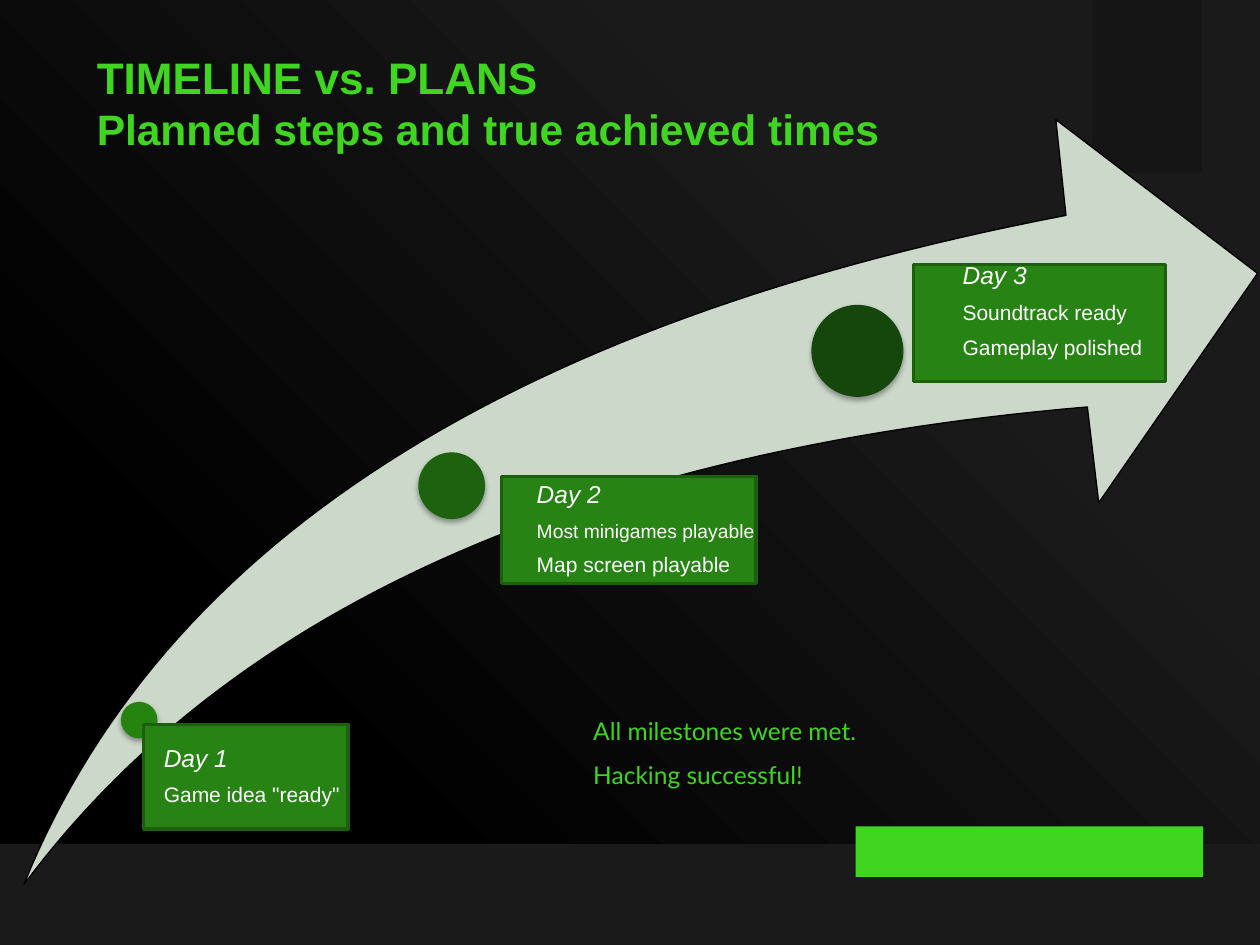
from dataclasses import dataclass

from lxml import etree
from pptx import Presentation
from pptx import util as u
from pptx.dml.color import RGBColor
from pptx.enum import shapes, text
from pptx.oxml import parse_xml
from pptx.oxml.ns import nsdecls, qn

Inches, Pt = u.Inches, u.Pt
SHAPE = shapes.MSO_SHAPE


@dataclass(frozen=True)
class Theme:
    black: str = "000000"
    panel: str = "1A1A1A"
    tab: str = "0C0C0C"
    accent: str = "40D520"
    arrow: str = "CBD8CA"
    card: str = "278313"
    card_line: str = "1C5F0D"
    white: str = "FFFFFF"
    font: str = "Arial"
    note_font: str = "Lato"
    title: float = 25.2
    subtitle: float = 24.3
    heading: float = 14
    body: float = 12
    small: float = 11


T = Theme()


def rgb(value):
    return RGBColor.from_string(value)


def add_run(p, content, size, color=T.white, font=T.font, bold=False, italic=False):
    r = p.add_run()
    r.text = content
    f = r.font
    f.size, f.name, f.bold, f.italic = Pt(size), font, bold, italic
    f.color.rgb = rgb(color)


def set_frame(tf, insets, anchor=text.MSO_ANCHOR.TOP):
    """Insets run left, top, right, bottom, in inches."""
    tf.word_wrap = True
    tf.vertical_anchor = anchor
    tf.margin_left, tf.margin_top, tf.margin_right, tf.margin_bottom = map(Inches, insets)
    return tf


def paragraphs(tf, count):
    return [tf.paragraphs[0]] + [tf.add_paragraph() for _ in range(count - 1)]


def style(sp, fill, line=None, width=0.75, shadow=False, alpha=None):
    sp.fill.solid()
    sp.fill.fore_color.rgb = rgb(fill)
    if line:
        sp.line.color.rgb = rgb(line)
        sp.line.width = Pt(width)
    else:
        sp.line.fill.background()
    sp.shadow.inherit = False
    props = sp._element.spPr
    if alpha is not None:
        color = props.find(qn("a:solidFill")).find(qn("a:srgbClr"))
        etree.SubElement(color, qn("a:alpha"), val=str(alpha * 1000))
    if shadow:
        props.find(qn("a:effectLst")).append(parse_xml(
            f'<a:outerShdw {nsdecls("a")} blurRad="{Pt(3.1)}" dist="{Pt(1.8)}" '
            f'dir="5400000" rotWithShape="0"><a:srgbClr val="{T.black}">'
            '<a:alpha val="35000"/></a:srgbClr></a:outerShdw>'))


def add_block(s, kind, box, fill, **look):
    sp = s.shapes.add_shape(kind, *map(Inches, box))
    style(sp, fill, **look)
    return sp


def set_background(s):
    """Radial gradient centred on the top right corner."""
    s.background.fill.solid()
    props = s._element.find(".//" + qn("p:bgPr"))
    stops = "".join(
        f'<a:gs pos="{pos * 1000}"><a:srgbClr val="{color}"/></a:gs>'
        for pos, color in ((0, T.panel), (27, T.panel), (77, T.black), (100, T.black)))
    props.replace(props[0], parse_xml(
        f'<a:gradFill {nsdecls("a")} rotWithShape="1"><a:gsLst>{stops}</a:gsLst>'
        '<a:path path="circle"><a:fillToRect l="100000" b="100000"/></a:path></a:gradFill>'))


def add_decor(s):
    add_block(s, SHAPE.RECTANGLE, (0, 6.7, 10, 0.81), T.panel, shadow=True)
    add_block(s, SHAPE.RECTANGLE, (6.79, 6.56, 2.76, 0.4), T.accent)
    add_block(s, SHAPE.RECTANGLE, (8.67, 0, 0.87, 1.37), T.tab, alpha=33)


def bezier(a, b, c, d, steps=60):
    """Points along a cubic curve, without its start."""
    for i in range(1, steps + 1):
        t = i / steps
        v = 1 - t
        yield tuple(v**3 * p + 3 * v * v * t * q + 3 * v * t * t * m + t**3 * n
                    for p, q, m, n in zip(a, b, c, d))


def add_arrow(s, box):
    """Curved arrow; its points are measured from the box's corner."""
    left, top, width, height = box
    tail, upper, lower = (0, height), (8.27, 0.76), (8.44, 2.28)
    points = [
        *bezier(tail, (1.09, 3.37), (3.84, 1.61), upper),
        (8.19, 0), (width, 1.22), (8.53, 3.04), lower,
        *bezier(lower, (4.45, 2.62), (1.63, 3.88), tail),
    ]
    points = [(Inches(left + x), Inches(top + y)) for x, y in points]
    builder = s.shapes.build_freeform(Inches(left), Inches(top + height), scale=1.0)
    builder.add_line_segments(points, close=True)
    style(builder.convert_to_shape(), T.arrow, line=T.black)


def add_milestone(s, dot, dot_color, card, insets, day, items):
    left, top, size = dot
    add_block(s, SHAPE.OVAL, (left, top, size, size), dot_color, shadow=True)
    sp = add_block(s, SHAPE.RECTANGLE, card, T.card, line=T.card_line, width=2)
    tf = set_frame(sp.text_frame, insets, text.MSO_ANCHOR.MIDDLE)
    lines = [(day, T.heading), *items]
    for i, (p, (content, size)) in enumerate(zip(paragraphs(tf, len(lines)), lines)):
        p.alignment = text.PP_ALIGN.LEFT
        p.line_spacing = 0.9
        p.space_before = Pt(7 if i else 0)
        add_run(p, content, size, italic=i == 0)


def add_title(s, box):
    tb = s.shapes.add_textbox(*map(Inches, box))
    p = set_frame(tb.text_frame, (0.1,) * 4).paragraphs[0]
    add_run(p, "TIMELINE vs. PLANS", T.title, T.accent, bold=True)
    p.add_line_break()
    add_run(p, "Planned steps and true achieved times", T.subtitle, T.accent, bold=True)


def add_summary(s, box):
    tb = s.shapes.add_textbox(*map(Inches, box))
    tf = set_frame(tb.text_frame, (0.1, 0.05, 0.1, 0.05))
    lines = ("All milestones were met.", "Hacking successful!")
    for p, content in zip(paragraphs(tf, len(lines)), lines):
        p.line_spacing = 1.5
        add_run(p, content, T.heading, T.accent, T.note_font)


MILESTONES = [
    ((0.96, 5.57, 0.29), "268310", (1.14, 5.75, 1.62, 0.83), (0.16, 0, 0, 0),
     "Day 1", [('Game idea "ready"', T.body)]),
    ((3.32, 3.59, 0.53), "1D630F", (3.98, 3.78, 2.02, 0.85), (0.28, 0, 0, 0),
     "Day 2", [("Most minigames playable", T.small), ("Map screen playable", T.body)]),
    ((6.44, 2.42, 0.73), "15460C", (7.25, 2.1, 2, 0.93), (0.39, 0, 0, 0.18),
     "Day 3", [("Soundtrack ready", T.body), ("Gameplay polished", T.body)]),
]


def main():
    prs = Presentation()
    prs.slide_width, prs.slide_height = Inches(10), Inches(7.5)
    s = prs.slides.add_slide(prs.slide_layouts[6])
    set_background(s)
    add_decor(s)
    add_arrow(s, (0.19, 0.95, 9.79, 6.07))
    for milestone in MILESTONES:
        add_milestone(s, *milestone)
    add_title(s, (0.67, 0.3, 7.95, 1.25))
    add_summary(s, (4.61, 5.52, 4.98, 0.86))
    prs.save("out.pptx")


if __name__ == "__main__":
    main()
